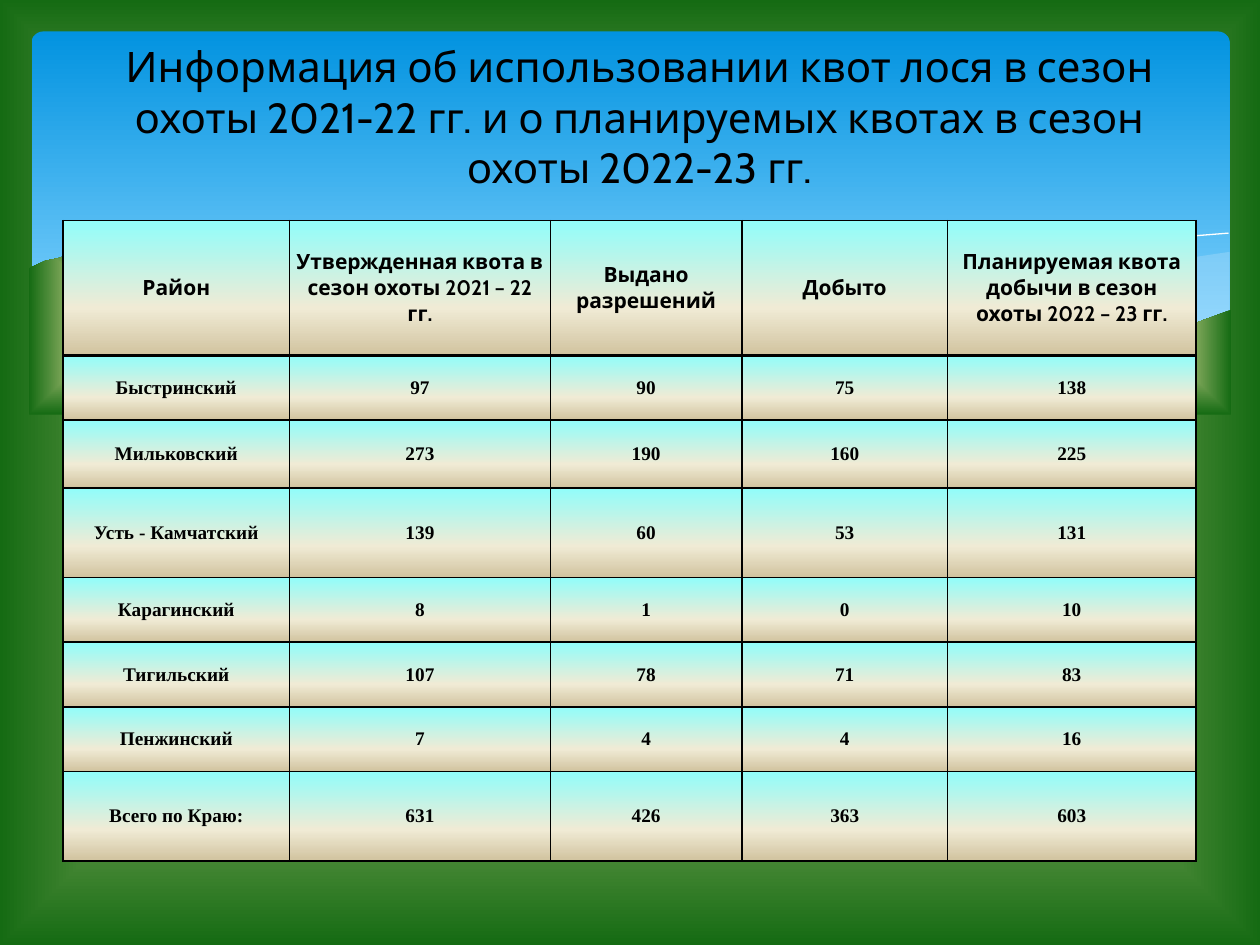
from dataclasses import dataclass
from typing import Optional

from lxml.etree import SubElement
from pptx import Presentation
from pptx.dml.color import RGBColor
from pptx.enum.shapes import MSO_SHAPE as Preset
from pptx.enum.text import MSO_ANCHOR as Anchor, MSO_AUTO_SIZE as AutoSize, PP_ALIGN as Align
from pptx.oxml.ns import qn
from pptx.util import Pt

COLORS = {
    "text": "000000", "border": "000000", "crest": "FFFFFF", "haze": "C6E7FC",
    "grass light": "DDEBCF", "grass": "9CB86E", "grass dark": "156B13",
    "sky top": "0293E0", "sky bottom": "83D3FE",
    "cell top": "91FDFA", "cell middle": "F0EBD5", "cell bottom": "D1C39F",
}
GRASS = [(0, "grass light"), (50, "grass"), (100, "grass dark")]
SKY = [(0, "sky top"), (90, "sky bottom")]
CELL = [(0, "cell top"), (65, "cell middle"), (100, "cell bottom")]

TITLE = ("Информация об использовании квот лося в сезон охоты 2021-22 гг. "
         "и о планируемых квотах в сезон охоты 2022-23 гг.")
COLUMN_WIDTHS = [129.5, 149, 109.5, 117.5, 142]
ROW_HEIGHTS = [77, 37, 39, 51, 37, 37, 37, 51]
ROWS = [
    ("Район", "Утвержденная квота в сезон охоты 2021 – 22 гг.", "Выдано разрешений",
     "Добыто", "Планируемая квота добычи в сезон охоты 2022 – 23 гг."),
    ("Быстринский", 97, 90, 75, 138),
    ("Мильковский", 273, 190, 160, 225),
    ("Усть - Камчатский", 139, 60, 53, 131),
    ("Карагинский", 8, 1, 0, 10),
    ("Тигильский", 107, 78, 71, 83),
    ("Пенжинский", 7, 4, 4, 16),
    ("Всего по Краю:", 631, 426, 363, 603),
]


@dataclass
class Wave:
    points: list
    opacity: Optional[int] = None
    closed: bool = True


@dataclass
class CellStyle:
    font: str
    size: float
    side_margin: float
    end_margin: float
    bottom_border: float


HEADER = CellStyle("Cabin", 12, 3.6, 3.6, 2)
BODY = CellStyle("Times New Roman", 11, 5, 0, 1)

WAVES = [
    Wave([(702, 144), (682.5, 146.9), (663, 151.2), (641.5, 156.2), (620, 160.6),
          (579.6, 170.6), (542.2, 178.6), (508.3, 185), (476, 190.8), (507.6, 195.1),
          (536.4, 198), (562.3, 199.4), (586, 200.2), (608, 199.4), (628, 198),
          (646, 194.4), (663, 190.8), (678, 186.5), (693.4, 181.4), (702.7, 177.8),
          (702.7, 144)], opacity=29),
    Wave([(643, 196.6), (602.6, 190.8), (558, 182.9), (508.3, 172.8), (453, 159.8),
          (420.5, 151.9), (389.5, 146.2), (361.4, 141.1), (334.8, 137.5), (302.4, 134.6),
          (273.6, 133.2), (247.7, 133.9), (225.4, 135.4), (206, 137.5), (232.6, 141.1),
          (260.6, 146.2), (291, 151.9), (323.3, 159.8), (381.6, 172.8), (432.7, 183.6),
          (468, 190.1), (510.5, 195.8), (548, 198.7), (581, 200.2), (610.6, 199.4)],
         opacity=40),
    Wave([(222.5, 140.4), (229, 139.7), (247.7, 136.8), (269.3, 135.4), (299.5, 134.6),
          (337.7, 136.1), (383, 139.7), (437.8, 146.9), (500.4, 157.7), (547.2, 167.8),
          (598.3, 180.7), (653, 195.8)], closed=False),
    Wave([(441.4, 185), (470.2, 177.1), (500.4, 169.2), (538.6, 160.6), (580.3, 151.2),
          (623.5, 143.3), (655.2, 138.2), (684.7, 134.6), (702, 133.2)], closed=False),
    Wave([(703.4, 177.1), (684, 184.3), (662.4, 190.8), (638.6, 195.1), (612, 198),
          (582.5, 199.4), (548, 198.7), (509.8, 195.8), (466.6, 188.6), (417, 180),
          (362.2, 167.8), (321.8, 158.4), (281.5, 149), (244.8, 141.8), (210.2, 136.8),
          (180, 133.9), (152, 132.5), (127.4, 132.5), (105, 133.9), (85.7, 136.1),
          (68.4, 139), (54.7, 142), (42.5, 144.7), (33.1, 147.6), (26, 149),
          (18, 152.6), (16.6, 153.4), (16.6, 236.9), (703.4, 236.9)]),
]


def rgb(name: str) -> RGBColor:
    return RGBColor.from_string(COLORS[name])


def fill_gradient(fill, element, stops: list, centred: bool = False) -> None:
    """Give the fill held in element a top-down gradient, or one from the centre out."""
    fill.gradient()
    gradient = next(element.iter(qn("a:gradFill")))
    for child in list(gradient):
        gradient.remove(child)
    stop_list = SubElement(gradient, qn("a:gsLst"))
    for percent, name in stops:
        stop = SubElement(stop_list, qn("a:gs"), pos=str(percent * 1000))
        SubElement(stop, qn("a:srgbClr"), val=COLORS[name])
    if centred:
        path = SubElement(gradient, qn("a:path"), path="shape")
        SubElement(path, qn("a:fillToRect"), l="50000", t="50000", r="50000", b="50000")
    else:
        SubElement(gradient, qn("a:lin"), ang="5400000", scaled="0")


def format_text(text_frame, font: str, size: float, bold: bool = False) -> None:
    paragraph = text_frame.paragraphs[0]
    paragraph.alignment = Align.CENTER
    for run in paragraph.runs:
        run.font.name = font
        run.font.size = Pt(size)
        run.font.bold = bold
        run.font.color.rgb = rgb("text")


def add_sky(slide) -> None:
    sky = slide.shapes.add_shape(Preset.ROUNDED_RECTANGLE, Pt(18), Pt(18), Pt(684.7), Pt(194.4))
    sky.adjustments[0] = 0.034
    sky.shadow.inherit = False
    sky.line.fill.background()
    fill_gradient(sky.fill, sky._element, SKY)


def add_wave(slide, wave: Wave) -> None:
    points = [(Pt(x), Pt(y)) for x, y in wave.points]
    builder = slide.shapes.build_freeform(*points[0])
    builder.add_line_segments(points[1:], close=wave.closed)
    shape = builder.convert_to_shape()
    shape.shadow.inherit = False
    if not wave.closed:
        shape.fill.background()
        shape.line.color.rgb = rgb("crest")
        shape.line.width = Pt(0)
        return
    shape.line.fill.background()
    if wave.opacity is None:
        fill_gradient(shape.fill, shape._element, GRASS, centred=True)
    else:
        shape.fill.solid()
        shape.fill.fore_color.rgb = rgb("haze")
        color = next(shape._element.iter(qn("a:srgbClr")))
        SubElement(color, qn("a:alpha"), val=str(wave.opacity * 1000))


def format_title(slide) -> None:
    title = slide.shapes.title
    title.left, title.top, title.width, title.height = Pt(36), Pt(21.6), Pt(658.8), Pt(90)
    frame = title.text_frame
    frame.text = TITLE
    frame.word_wrap = True
    frame.auto_size = AutoSize.NONE
    frame.vertical_anchor = Anchor.MIDDLE
    format_text(frame, "Cabin", 24)
    slide.shapes._spTree.append(title._element)  # in front of the sky


def add_borders(cell, top: float, bottom: float) -> None:
    properties = cell._tc.get_or_add_tcPr()
    for side, width in (("L", 1), ("R", 1), ("T", top), ("B", bottom)):
        line = SubElement(properties, qn(f"a:ln{side}"), w=str(Pt(width)))
        fill = SubElement(line, qn("a:solidFill"))
        SubElement(fill, qn("a:srgbClr"), val=COLORS["border"])


def format_cell(cell, value, style: CellStyle, top_border: float) -> None:
    cell.text_frame.text = str(value)
    cell.vertical_anchor = Anchor.MIDDLE
    cell.margin_left = cell.margin_right = Pt(style.side_margin)
    cell.margin_top = cell.margin_bottom = Pt(style.end_margin)
    format_text(cell.text_frame, style.font, style.size, bold=True)
    add_borders(cell, top_border, style.bottom_border)
    fill_gradient(cell.fill, cell._tc, CELL)


def add_quota_table(slide) -> None:
    table = slide.shapes.add_table(len(ROWS), len(COLUMN_WIDTHS), Pt(36), Pt(126),
                                   Pt(sum(COLUMN_WIDTHS)), Pt(sum(ROW_HEIGHTS))).table
    for column, width in zip(table.columns, COLUMN_WIDTHS):
        column.width = Pt(width)
    for index, (row, height, values) in enumerate(zip(table.rows, ROW_HEIGHTS, ROWS)):
        row.height = Pt(height)
        style = BODY if index else HEADER
        top_border = HEADER.bottom_border if index == 1 else 1
        for cell, value in zip(row.cells, values):
            format_cell(cell, value, style, top_border)


def main() -> None:
    presentation = Presentation()
    presentation.slide_width, presentation.slide_height = Pt(720), Pt(540)
    slide = presentation.slides.add_slide(presentation.slide_layouts[5])
    fill_gradient(slide.background.fill, slide._element, GRASS, centred=True)
    add_sky(slide)
    for wave in WAVES:
        add_wave(slide, wave)
    format_title(slide)
    add_quota_table(slide)
    presentation.save("out.pptx")


if __name__ == "__main__":
    main()
